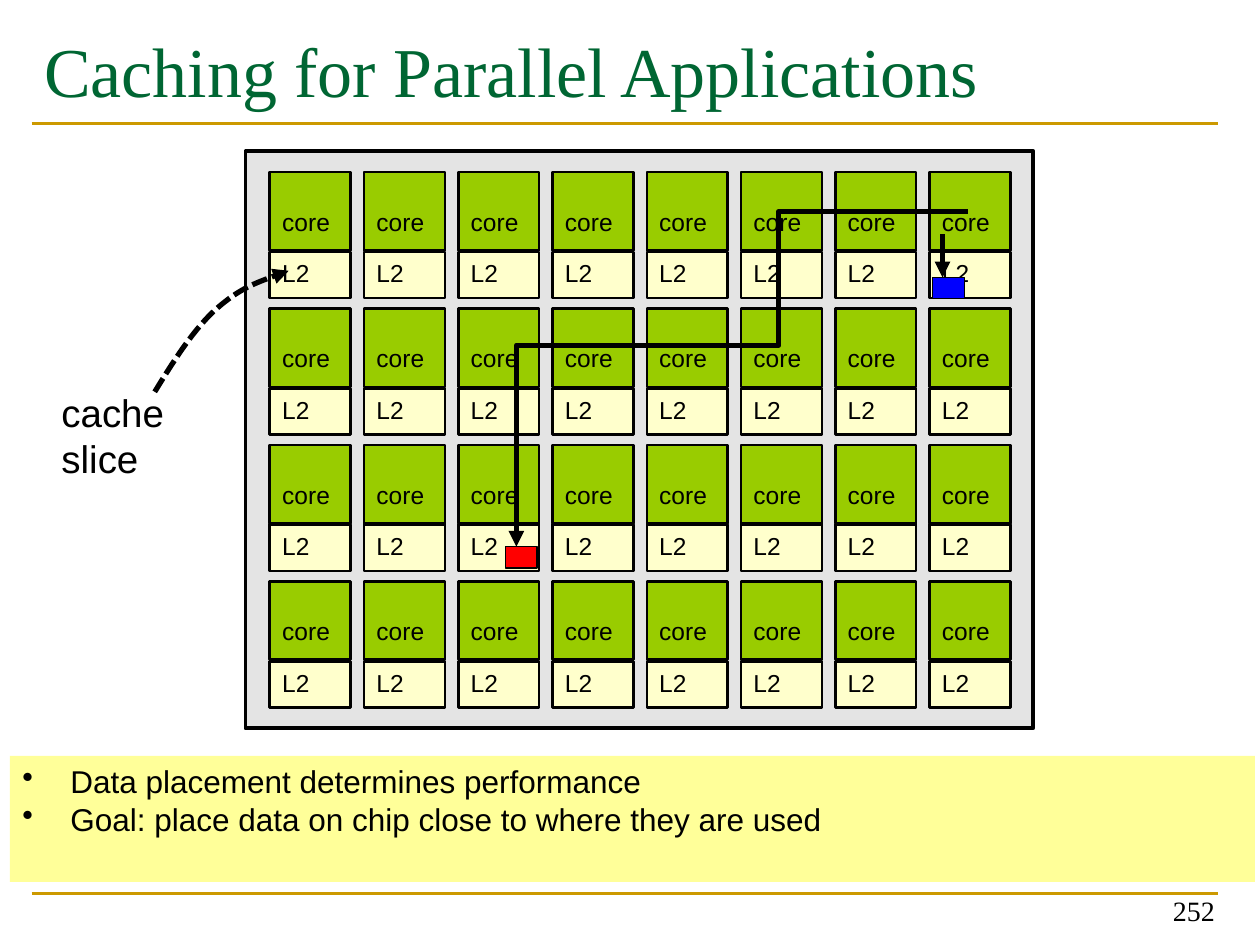
from lxml.etree import SubElement
from pptx import Presentation
from pptx.dml.color import RGBColor
from pptx.enum.dml import MSO_LINE
from pptx.enum.shapes import MSO_CONNECTOR, MSO_SHAPE
from pptx.enum.text import MSO_ANCHOR as Anchor, MSO_AUTO_SIZE as AutoSize, PP_ALIGN as Align
from pptx.oxml.ns import qn
from pptx.util import Cm, Pt

COLORS = {
    "title": "006633", "rule": "CC9900", "ink": "000000", "chip": "E4E4E4",
    "core": "99CC00", "cache": "FFFFCC", "notes": "FFFF99",
    "near": "0000FF", "far": "FF0000",
}
SANS, SERIF = "Arial", "Times New Roman"

COLUMNS, ROWS = 8, 4
GRID_LEFT, GRID_TOP = 5.44, 3.47
PITCH_X, PITCH_Y = 1.9, 2.75
TILE_WIDTH, CORE_HEIGHT, CACHE_HEIGHT = 1.63, 1.58, 0.93
CACHE_OFFSET = 1.61
HANGING = 0.97


def color(name):
    return RGBColor.from_string(COLORS[name])


def style_line(line, name, width):
    line.color.rgb = color(name)
    line.width = Pt(width)


def add_arrowhead(line):
    SubElement(line._get_or_add_ln(), qn("a:tailEnd"), type="triangle")


def add_box(slide, box, fill, line_width=None):
    shape = slide.shapes.add_shape(MSO_SHAPE.RECTANGLE, *map(Cm, box))
    shape.shadow.inherit = False
    shape.fill.solid()
    shape.fill.fore_color.rgb = color(fill)
    if line_width:
        style_line(shape.line, "ink", line_width)
    else:
        shape.line.fill.background()
    return shape


def write(shape, lines, size, font=SANS, ink="ink", align=Align.LEFT,
          anchor=Anchor.TOP, wrap=True):
    """Put one paragraph per line into the shape and return its paragraphs."""
    frame = shape.text_frame
    frame.word_wrap = wrap
    frame.vertical_anchor = anchor
    for index, line in enumerate(lines):
        paragraph = frame.add_paragraph() if index else frame.paragraphs[0]
        paragraph.alignment = align
        run = paragraph.add_run()
        run.text = line
        run.font.size = Pt(size)
        run.font.name = font
        run.font.color.rgb = color(ink)
    return frame.paragraphs


def add_label(slide, box, lines, size, **style):
    label = slide.shapes.add_textbox(*map(Cm, box))
    write(label, lines, size, **style)
    return label


def hang(paragraph):
    properties = paragraph._p.get_or_add_pPr()
    properties.set("marL", str(Cm(HANGING)))
    properties.set("indent", str(-Cm(HANGING)))
    return properties


def add_line(slide, start, end, name, width):
    connector = slide.shapes.add_connector(
        MSO_CONNECTOR.STRAIGHT, *map(Cm, start + end))
    style_line(connector.line, name, width)
    SubElement(connector._element.spPr, qn("a:effectLst"))
    return connector


def add_route(slide, points):
    """Draw an open path through the points, ending in an arrowhead."""
    start, *rest = [(Cm(x), Cm(y)) for x, y in points]
    builder = slide.shapes.build_freeform(*start)
    builder.add_line_segments(rest, close=False)
    route = builder.convert_to_shape()
    route.shadow.inherit = False
    route.fill.background()
    style_line(route.line, "ink", 3)
    return route


def bend(route):
    """Turn each three straight segments into one cubic Bezier segment."""
    path = next(route._element.iter(qn("a:path")))
    segments = path.findall(qn("a:lnTo"))
    for first in range(0, len(segments), 3):
        curve = SubElement(path, qn("a:cubicBezTo"))
        for segment in segments[first:first + 3]:
            curve.append(segment[0])
            path.remove(segment)


def add_tile(slide, left, top):
    core = add_box(slide, (left, top, TILE_WIDTH, CORE_HEIGHT), "core", 1.5)
    write(core, ["core"], 14)
    core.text_frame.margin_top = Cm(0.7)
    cache = add_box(slide, (left, top + CACHE_OFFSET, TILE_WIDTH, CACHE_HEIGHT),
                    "cache", 1.5)
    name, = write(cache, ["L2"], 14, anchor=Anchor.MIDDLE, wrap=False)
    name.line_spacing = 0.9
    hang(name)


def add_chip(slide):
    add_box(slide, (4.95, 3.05, 15.88, 11.63), "chip", 2.25)
    for row in range(ROWS):
        for column in range(COLUMNS):
            add_tile(slide, GRID_LEFT + column * PITCH_X, GRID_TOP + row * PITCH_Y)


def add_takeaways(slide):
    notes = add_box(slide, (0.2, 15.24, 25.1, 2.54), "notes")
    takeaways = ["Data placement determines performance",
                 "Goal: place data on chip close to where they are used"]
    for paragraph in write(notes, takeaways, 18):
        SubElement(hang(paragraph), qn("a:buChar"), char="•")


def add_data_paths(slide):
    add_box(slide, (18.8, 5.59, 0.64, 0.43), "near", 0.75)
    near_path = add_line(slide, (19.0, 4.72), (19.0, 5.59), "ink", 3)
    add_arrowhead(near_path.line)
    add_box(slide, (10.19, 11.02, 0.64, 0.43), "far", 0.75)
    far_path = add_route(slide, [(19.51, 4.27), (15.7, 4.27), (15.7, 6.96),
                                 (10.41, 6.96), (10.41, 11.02)])
    add_arrowhead(far_path.line)


def add_cache_callout(slide):
    label = add_label(slide, (0.99, 7.72, 2.77, 2.34), ["cache", "slice"], 22,
                      wrap=False)
    label.text_frame.auto_size = AutoSize.SHAPE_TO_FIT_TEXT
    pointer = add_route(slide, [(3.12, 7.9), (3.51, 7.26), (3.91, 6.63), (4.37, 6.22),
                                (4.83, 5.82), (5.31, 5.64), (5.82, 5.46)])
    bend(pointer)
    pointer.line.dash_style = MSO_LINE.SQUARE_DOT
    add_arrowhead(pointer.line)


def main():
    deck = Presentation()
    deck.slide_width, deck.slide_height = Cm(25.4), Cm(19.05)
    slide = deck.slides.add_slide(deck.slide_layouts[6])
    for height in (18.01, 2.49):
        add_line(slide, (0.64, height), (24.56, height), "rule", 1.5)
    add_label(slide, (0.64, 0.43, 23.93, 2.97), ["Caching for Parallel Applications"],
              40, font=SERIF, ink="title")
    add_label(slide, (18.82, 17.55, 5.92, 1.27), ["252"], 16, font=SERIF,
              align=Align.RIGHT, anchor=Anchor.BOTTOM)
    add_chip(slide)
    add_takeaways(slide)
    add_data_paths(slide)
    add_cache_callout(slide)
    deck.save("out.pptx")


if __name__ == "__main__":
    main()
